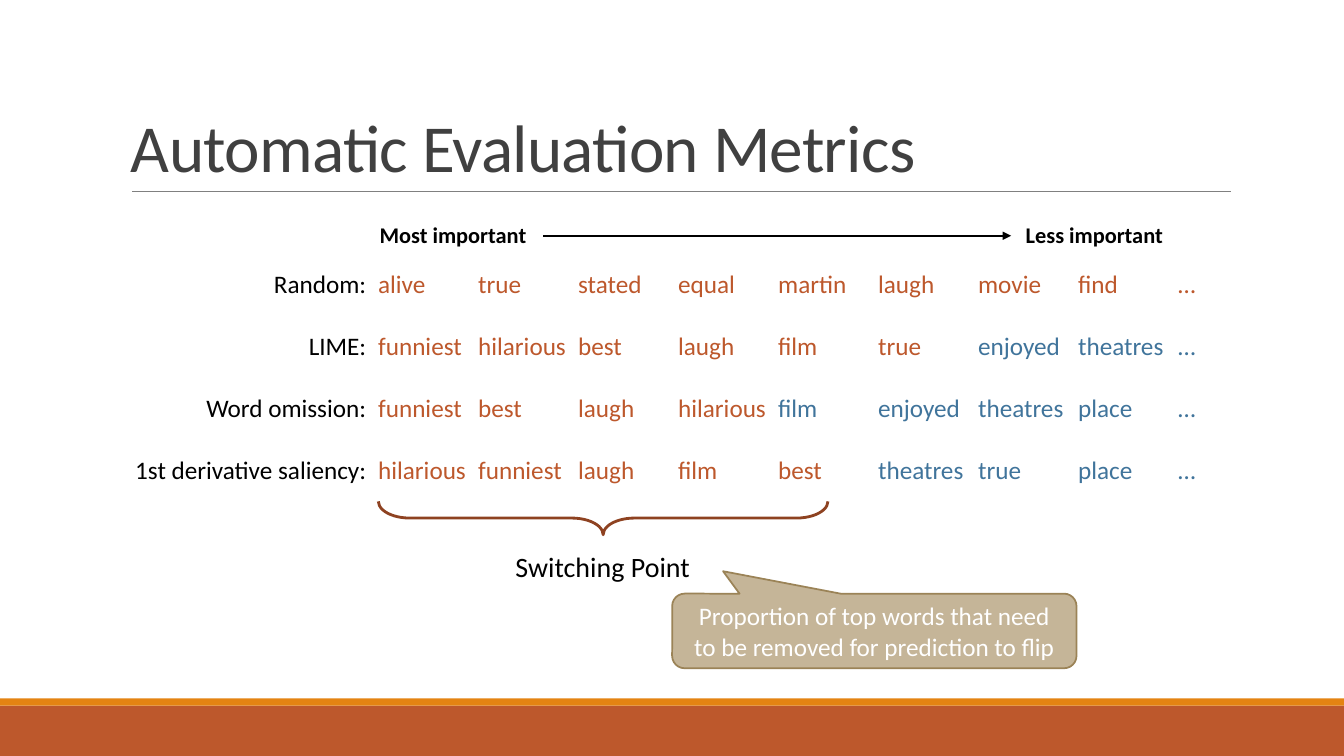
import dataclasses

import lxml.etree
import pptx
import pptx.dml.color
import pptx.enum.shapes
import pptx.enum.text
import pptx.oxml.ns
import pptx.util

Cm = pptx.util.Cm
Align = pptx.enum.text.PP_ALIGN
Anchor = pptx.enum.text.MSO_ANCHOR
Shape = pptx.enum.shapes.MSO_SHAPE


@dataclasses.dataclass(frozen=True)
class Theme:
    font: str = "Calibri"
    title_size: float = 48
    label_size: float = 20
    body_size: float = 18
    axis_size: float = 16
    black: str = "000000"
    white: str = "FFFFFF"
    title: str = "404040"
    rule: str = "808080"
    rust: str = "BD582C"
    orange: str = "E48312"
    blue: str = "40749B"
    brace: str = "8E4221"
    callout: str = "C5B598"
    callout_edge: str = "9B8357"


def rgb(color):
    return pptx.dml.color.RGBColor.from_string(color)


def write(frame, text, *, font, size, color, bold=False, align=Align.LEFT,
          line_spacing=None, letter_spacing=None):
    paragraph = frame.paragraphs[0]
    paragraph.alignment = align
    paragraph.line_spacing = line_spacing
    run = paragraph.add_run()
    run.text = text
    run.font.name = font
    run.font.size = pptx.util.Pt(size)
    run.font.bold = bold
    run.font.color.rgb = rgb(color)
    if letter_spacing is not None:
        run.font._element.set("spc", str(round(letter_spacing * 100)))


class SlideBuilder:
    def __init__(self, slide, theme):
        self.slide = slide
        self.theme = theme

    def shape(self, kind, left, top, width, height, fill=None, line=None,
              line_width=1, adjustments=(), rotation=0):
        shape = self.slide.shapes.add_shape(kind, Cm(left), Cm(top), Cm(width), Cm(height))
        shape.shadow.inherit = False
        shape.rotation = rotation
        for index, value in enumerate(adjustments):
            shape.adjustments[index] = value
        if fill:
            shape.fill.solid()
            shape.fill.fore_color.rgb = rgb(fill)
        else:
            shape.fill.background()
        if line:
            shape.line.color.rgb = rgb(line)
            shape.line.width = pptx.util.Pt(line_width)
        else:
            shape.line.fill.background()
        return shape

    def text(self, text, left, top, width, height, wrap=True, anchor=Anchor.TOP, **style):
        box = self.slide.shapes.add_textbox(Cm(left), Cm(top), Cm(width), Cm(height))
        box.text_frame.word_wrap = wrap
        box.text_frame.vertical_anchor = anchor
        write(box.text_frame, text, font=self.theme.font, **style)

    def line(self, left, right, y, color, width, arrow=False):
        connector = self.slide.shapes.add_connector(
            pptx.enum.shapes.MSO_CONNECTOR.STRAIGHT, Cm(left), Cm(y), Cm(right), Cm(y))
        connector.line.color.rgb = rgb(color)
        connector.line.width = pptx.util.Pt(width)
        qn = pptx.oxml.ns.qn
        if arrow:
            outline = connector.element.spPr.find(qn("a:ln"))
            lxml.etree.SubElement(outline, qn("a:tailEnd"), type="triangle")
        lxml.etree.SubElement(connector.element.spPr, qn("a:effectLst"))

    def ranking_table(self, rankings, left, top, label_width, word_width, row_height):
        columns = len(rankings[0][2]) + 1
        table = self.slide.shapes.add_table(
            len(rankings), columns, Cm(left), Cm(top),
            Cm(label_width + word_width * (columns - 1)),
            Cm(row_height * len(rankings))).table
        table.first_row = False
        table.horz_banding = False
        for index, column in enumerate(table.columns):
            column.width = Cm(word_width if index else label_width)
        for row, (label, switch, words) in enumerate(rankings):
            table.rows[row].height = Cm(row_height)
            self.cell(table.cell(row, 0), label, 0.2, self.theme.black, Align.RIGHT)
            for column, word in enumerate(words, 1):
                color = self.theme.rust if column <= switch else self.theme.blue
                self.cell(table.cell(row, column), word, 0.1, color, Align.LEFT)

    def cell(self, cell, text, margin, color, align):
        cell.fill.background()
        cell.vertical_anchor = Anchor.MIDDLE
        cell.margin_left = cell.margin_right = Cm(margin)
        write(cell.text_frame, text, font=self.theme.font, size=self.theme.body_size,
              color=color, align=align)

    def callout(self, text, left, top, width, height, adjustments):
        shape = self.shape(Shape.ROUNDED_RECTANGULAR_CALLOUT, left, top, width, height,
                           self.theme.callout, self.theme.callout_edge, 1.25, adjustments)
        shape.text_frame.word_wrap = True
        shape.text_frame.vertical_anchor = Anchor.MIDDLE
        write(shape.text_frame, text, font=self.theme.font, size=self.theme.body_size,
              color=self.theme.white, align=Align.CENTER)


RANKINGS = [
    ("Random:", 9, ["alive", "true", "stated", "equal", "martin", "laugh", "movie", "find", "…"]),
    ("LIME:", 6, ["funniest", "hilarious", "best", "laugh", "film", "true", "enjoyed", "theatres", "…"]),
    ("Word omission:", 4,
     ["funniest", "best", "laugh", "hilarious", "film", "enjoyed", "theatres", "place", "…"]),
    ("1st derivative saliency:", 5,
     ["hilarious", "funniest", "laugh", "film", "best", "theatres", "true", "place", "…"]),
]


def main():
    presentation = pptx.Presentation()
    presentation.slide_width = Cm(33.87)
    presentation.slide_height = Cm(19.05)
    theme = Theme()
    builder = SlideBuilder(presentation.slides.add_slide(presentation.slide_layouts[6]), theme)

    builder.shape(Shape.RECTANGLE, 0, 17.78, 33.87, 1.27, theme.rust)
    builder.shape(Shape.RECTANGLE, 0, 17.6, 33.87, 0.18, theme.orange)
    builder.line(3.33, 31.01, 4.83, theme.rule, 0.5)
    builder.text("Automatic Evaluation Metrics", 3.05, 0.79, 27.94, 4.04, anchor=Anchor.BOTTOM,
                 size=theme.title_size, color=theme.title, line_spacing=0.85, letter_spacing=-0.5)

    builder.ranking_table(RANKINGS, 3.05, 6.4, 6.38, 2.52, 1.56)

    builder.shape(Shape.RIGHT_BRACE, 14.78, 7.39, 0.84, 11.33, line=theme.brace,
                  line_width=2, adjustments=(0.944, 0.5), rotation=90)
    builder.text("Switching Point", 11.43, 13.72, 7.52, 1.12,
                 size=theme.label_size, color=theme.black, align=Align.CENTER)
    builder.callout("Proportion of top words that need to be removed for prediction to flip",
                    16.94, 14.96, 10.19, 1.88, (-0.374, -0.801, 0.167))

    for label, left, width in (("Most important", 9.32, 4.24), ("Less important", 25.6, 4.01)):
        builder.text(label, left, 5.46, width, 0.94, wrap=False,
                     size=theme.axis_size, color=theme.black, bold=True)
    builder.line(13.69, 25.48, 5.94, theme.black, 1.5, arrow=True)

    presentation.save("out.pptx")


if __name__ == "__main__":
    main()
